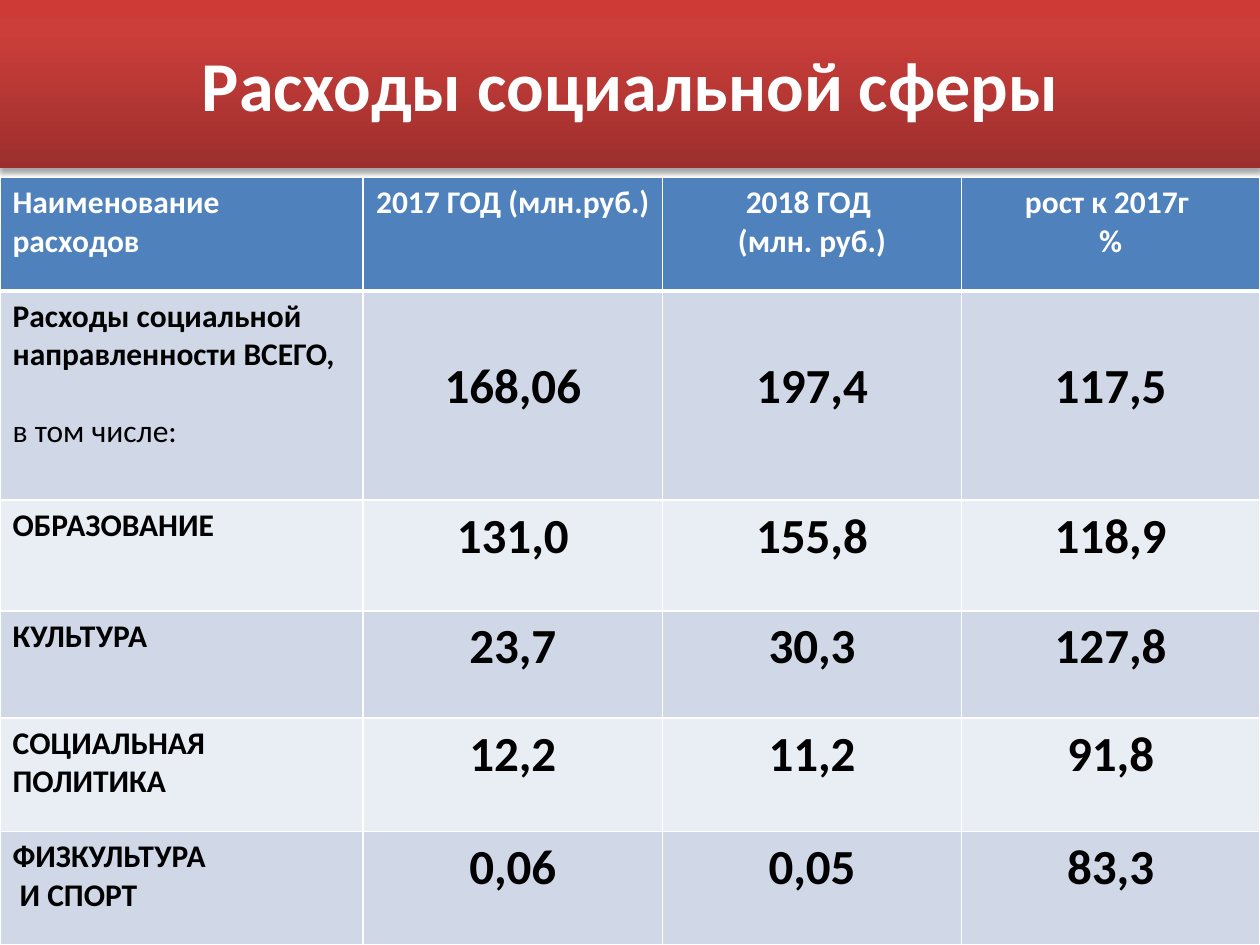
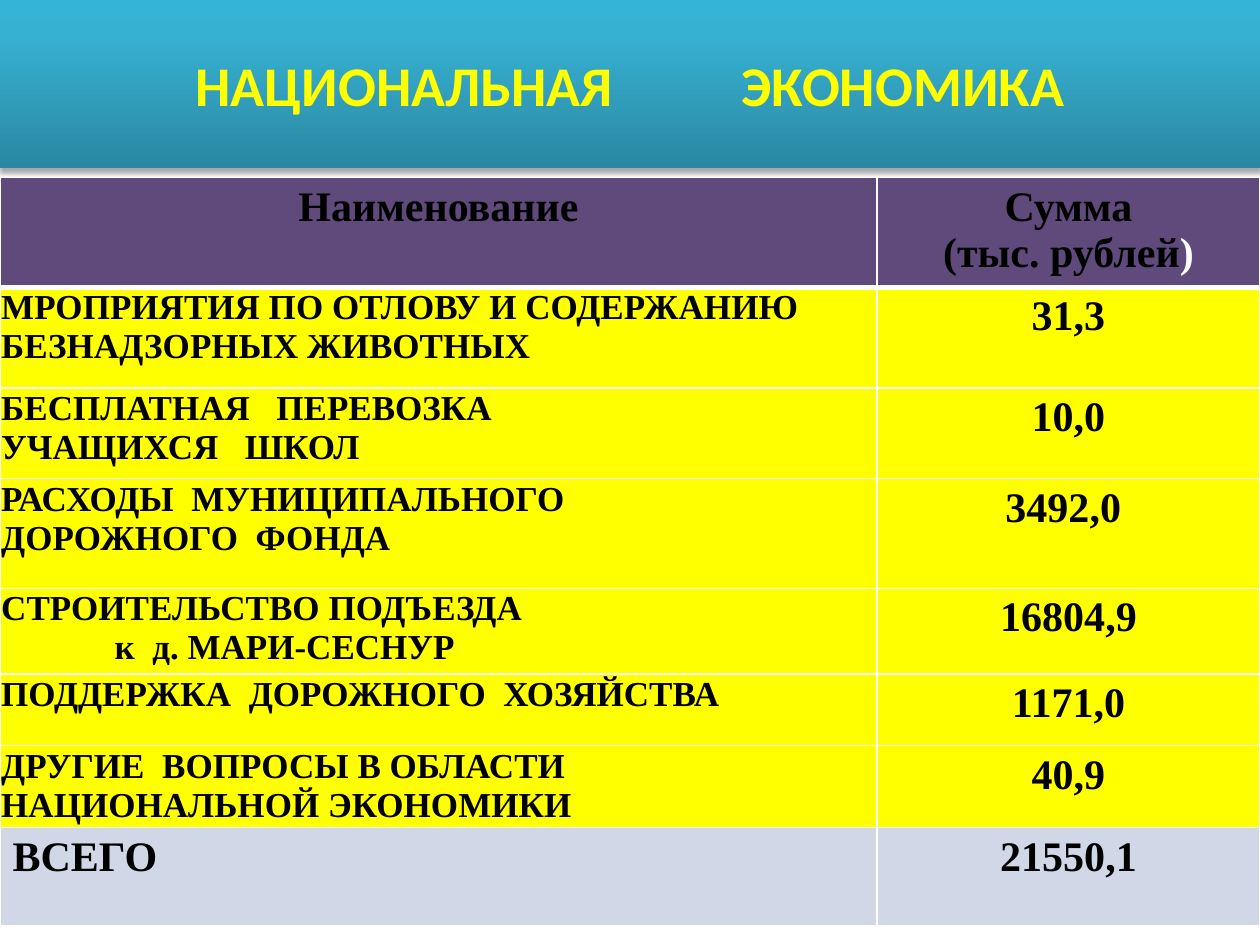
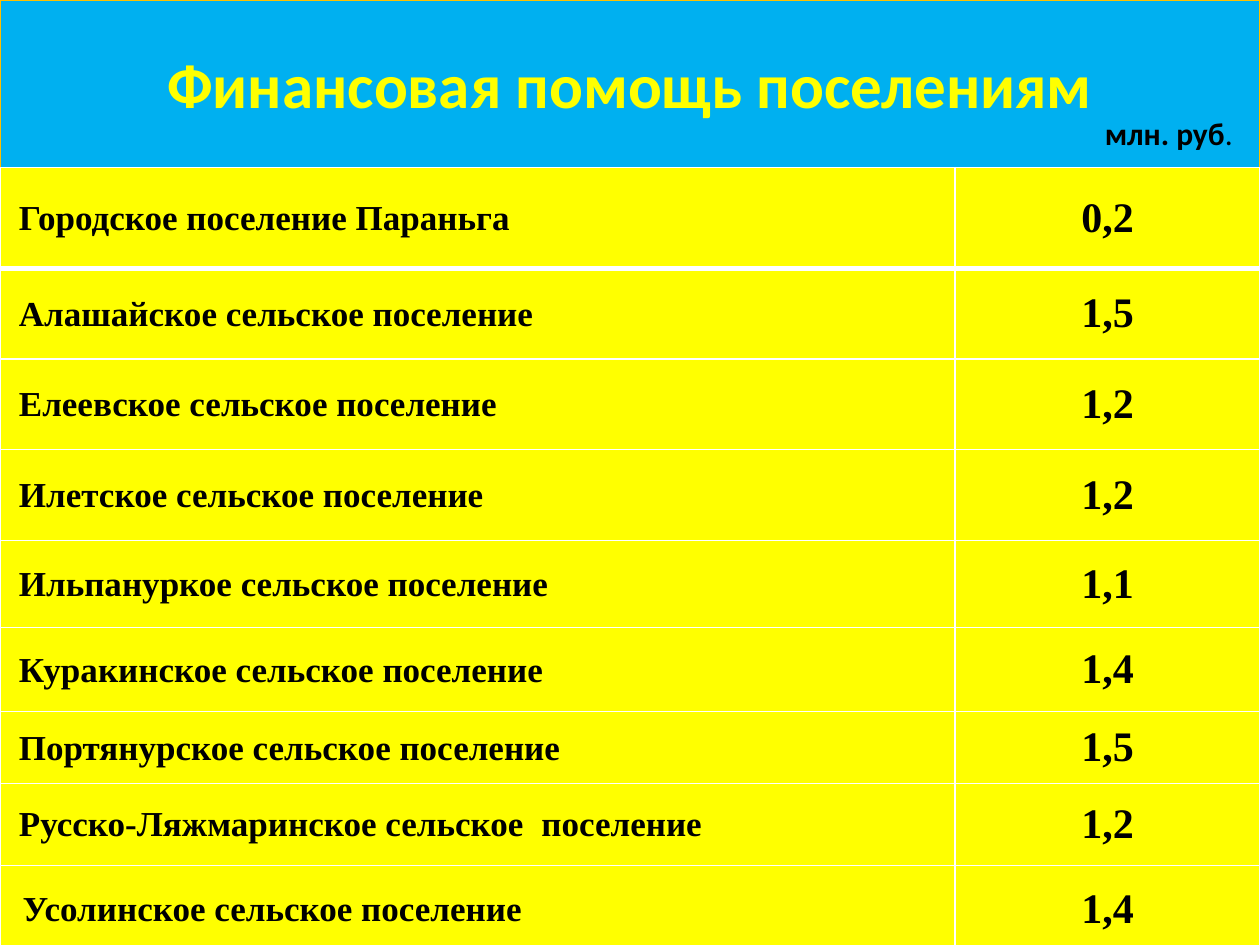
from lxml import etree
from pptx import Presentation
from pptx.dml.color import RGBColor
from pptx.enum.text import MSO_ANCHOR, MSO_AUTO_SIZE, PP_ALIGN
from pptx.oxml.ns import qn
from pptx.util import Pt

LEFT, CENTER = PP_ALIGN.LEFT, PP_ALIGN.CENTER
TOP, MIDDLE = MSO_ANCHOR.TOP, MSO_ANCHOR.MIDDLE
FIT_SHAPE = MSO_AUTO_SIZE.SHAPE_TO_FIT_TEXT

PX = 9144  # 100 px to the inch
W, H, BAND_H = 1000, 750, 133
SANS, SERIF = "Calibri", "Times New Roman"
GAP = "~"  # one wide space between words
CELL_INSETS = (10, 5, 10, 5)
TIGHT_INSETS = (1, 1, 1, 0)
C = {
    "white": "FFFFFF", "black": "000000", "yellow": "FFFF00",
    "header": "4F81BD", "band_dark": "D0D8E8", "band_light": "E9EDF4",
    "purple": "604A7B", "sky": "00B0F0", "orange": "FFC000",
}
RED = [(0, "9C2F2D"), (80, "CB3E3A"), (100, "CE3B37")]
TEAL = [(0, "2A88A2"), (80, "37B1D2"), (100, "34B4D6")]


def rgb(name):
    return RGBColor.from_string(C[name])


def sub(parent, tag, **attrs):
    el = etree.SubElement(parent, qn(tag))
    for key, value in attrs.items():
        el.set(key, str(value))
    return el


class Deck:
    def __init__(self):
        self.prs = Presentation()
        self.prs.slide_width, self.prs.slide_height = W * PX, H * PX
        self.s = None

    def new_slide(self):
        self.s = self.prs.slides.add_slide(self.prs.slide_layouts[5])

    def add_text(self, tf, lines, size, font=SANS, color="black", bold=True,
                 align=LEFT, gap=0):
        """Each line is a string or a list of (text, overrides) runs."""
        for i, line in enumerate(lines):
            p = tf.paragraphs[0] if i == 0 else tf.add_paragraph()
            p.alignment = align
            for text, over in [(line, {})] if isinstance(line, str) else line:
                for j, part in enumerate(text.split(GAP)):
                    pieces = [part] if j == 0 else [" ", part]
                    for piece in pieces:
                        r = p.add_run()
                        r.text = piece
                        r.font.size, r.font.name = Pt(size), font
                        r.font.bold = over.get("bold", bold)
                        r.font.color.rgb = rgb(over.get("color", color))
                        if piece == " ":
                            r._r.get_or_add_rPr().set("spc", str(gap * 100))

    def title(self, text, size, color, stops=None, fill=None, line=None, gap=0):
        sp = self.s.shapes.title
        sp.left, sp.top, sp.width, sp.height = 0, 0, W * PX, BAND_H * PX
        spPr = sp._element.spPr
        if stops:
            grad = sub(spPr, "a:gradFill", rotWithShape=1)
            gs_lst = sub(grad, "a:gsLst")
            for pos, value in stops:
                gs = sub(gs_lst, "a:gs", pos=pos * 1000)
                sub(gs, "a:srgbClr", val=value)
            sub(grad, "a:lin", ang=270 * 60000, scaled=0)
        else:
            sp.fill.solid()
            sp.fill.fore_color.rgb = rgb(fill)
            sp.line.color.rgb = rgb(line)
            sp.line.width = Pt(0.75)
        shadow = sub(sub(spPr, "a:effectLst"), "a:outerShdw", blurRad=Pt(3.1),
                     dist=Pt(1.8), dir=90 * 60000, rotWithShape=0)
        sub(sub(shadow, "a:srgbClr", val=C["black"]), "a:alpha", val=35000)
        sp.text_frame.vertical_anchor = MIDDLE
        self.add_text(sp.text_frame, [text], size, color=color, align=CENTER, gap=gap)

    def table(self, top, cols, rows):
        frame = self.s.shapes.add_table(len(rows), len(cols), 0, top * PX,
                                        W * PX, sum(rows) * PX)
        tbl = frame.table
        tbl.horz_banding = False
        for col, width in zip(tbl.columns, cols):
            col.width = width * PX
        for row, height in zip(tbl.rows, rows):
            row.height = height * PX
        return tbl

    def cell(self, tbl, row, col, lines, size, fill, anchor=TOP,
             insets=CELL_INSETS, **style):
        cell = tbl.cell(row, col)
        (cell.margin_left, cell.margin_top,
         cell.margin_right, cell.margin_bottom) = [v * PX for v in insets]
        cell.vertical_anchor = anchor
        tcPr = cell._tc.get_or_add_tcPr()
        for side in "LRTB":
            thick = (row == 0 and side == "B") or (row == 1 and side == "T")
            ln = sub(tcPr, f"a:ln{side}", w=Pt(3 if thick else 1))
            sub(sub(ln, "a:solidFill"), "a:srgbClr", val=C["white"])
        cell.fill.solid()
        cell.fill.fore_color.rgb = rgb(fill)
        self.add_text(cell.text_frame, lines, size, **style)

    def label(self, left, top, width, height, line, size):
        sp = self.s.shapes.add_textbox(left * PX, top * PX, width * PX, height * PX)
        sp.text_frame.word_wrap = True
        sp.text_frame.auto_size = FIT_SHAPE
        self.add_text(sp.text_frame, [line], size)


def social_spending(deck):
    deck.new_slide()
    deck.title("Расходы социальной сферы", 40, "white", stops=RED)
    tbl = deck.table(141, [288, 238, 237, 237], [90, 166, 88, 85, 90, 90])

    # Header row
    heads = [["Наименование расходов"], ["2017 ГОД (млн.руб.)"],
             ["2018 ГОД ", "(млн. руб.)"], ["рост к 2017г ", "%"]]
    for col, lines in enumerate(heads):
        deck.cell(tbl, 0, col, lines, 18, "header", color="white",
                  align=CENTER if col else LEFT)

    # Spending rows
    spending = [
        (["Расходы социальной направленности ВСЕГО,",
          [("в том числе:", {"bold": False})]], "168,06", "197,4", "117,5"),
        (["ОБРАЗОВАНИЕ"], "131,0", "155,8", "118,9"),
        (["КУЛЬТУРА"], "23,7", "30,3", "127,8"),
        (["СОЦИАЛЬНАЯ ПОЛИТИКА"], "12,2", "11,2", "91,8"),
        (["ФИЗКУЛЬТУРА", " И СПОРТ"], "0,06", "0,05", "83,3"),
    ]
    for row, (name, *values) in enumerate(spending, 1):
        fill = "band_dark" if row % 2 else "band_light"
        deck.cell(tbl, row, 0, name, 18, fill)
        insets = (10, 52, 10, 5) if row == 1 else CELL_INSETS
        for col, value in enumerate(values, 1):
            deck.cell(tbl, row, col, [value], 28, fill, insets=insets, align=CENTER)
    tbl.cell(1, 0).text_frame.paragraphs[1].space_before = Pt(22)


def national_economy(deck):
    deck.new_slide()
    deck.title("НАЦИОНАЛЬНАЯ~ЭКОНОМИКА", 32, "yellow", stops=TEAL, gap=66)
    tbl = deck.table(141, [696, 304], [87, 80, 72, 87, 68, 57, 65, 78])

    # Header row
    amount = ["Сумма", [("(тыс. рублей", {}), (")", {"color": "white"})]]
    for col, lines in enumerate([["Наименование"], amount]):
        deck.cell(tbl, 0, col, lines, 24, "purple", font=SERIF, align=CENTER)

    # Items: lines, value, extra width of the wide spaces in points
    items = [
        (["МРОПРИЯТИЯ ПО ОТЛОВУ И СОДЕРЖАНИЮ БЕЗНАДЗОРНЫХ ЖИВОТНЫХ"], "31,3", 0),
        (["БЕСПЛАТНАЯ~ПЕРЕВОЗКА", "УЧАЩИХСЯ~ШКОЛ"], "10,0", 10),
        (["РАСХОДЫ~МУНИЦИПАЛЬНОГО", "ДОРОЖНОГО~ФОНДА"], "3492,0 ", 5),
        (["СТРОИТЕЛЬСТВО ПОДЪЕЗДА", "к~д. МАРИ-СЕСНУР"], "16804,9", 5),
        (["ПОДДЕРЖКА~ДОРОЖНОГО~ХОЗЯЙСТВА"], "1171,0", 5),
        (["ДРУГИЕ~ВОПРОСЫ В ОБЛАСТИ НАЦИОНАЛЬНОЙ ЭКОНОМИКИ"], "40,9", 5),
    ]
    for row, (name, value, gap) in enumerate(items, 1):
        deck.cell(tbl, row, 0, name, 20, "yellow", insets=TIGHT_INSETS,
                  font=SERIF, gap=gap)
        deck.cell(tbl, row, 1, [value], 24, "yellow", font=SERIF, align=CENTER)
    village = tbl.cell(4, 0).text_frame.paragraphs[1]
    village._p.get_or_add_pPr().set("marL", str(90 * PX))

    # Total row
    for col, text in enumerate(["ВСЕГО", "21550,1"]):
        deck.cell(tbl, 7, col, [text], 24, "band_dark", font=SERIF,
                  align=CENTER if col else LEFT)


def settlement_aid(deck):
    deck.new_slide()
    deck.title("Финансовая помощь поселениям", 36, "yellow", fill="sky", line="orange")
    settlements = [
        ("Городское поселение Параньга", "0,2"),
        ("Алашайское сельское поселение", "1,5"),
        ("Елеевское сельское поселение", "1,2"),
        ("Илетское сельское поселение", "1,2"),
        ("Ильпануркое сельское поселение", "1,1"),
        ("Куракинское сельское поселение", "1,4"),
        ("Портянурское сельское поселение", "1,5"),
        ("Русско-Ляжмаринское сельское~поселение", "1,2"),
        ("Усолинское сельское поселение", "1,4"),
    ]
    tbl = deck.table(BAND_H, [758, 242], [80, 72, 72, 72, 69, 67, 57, 65, 70])
    last = len(settlements) - 1
    for row, (name, value) in enumerate(settlements):
        insets = (18, 5, 10, 5) if row == last else (15, 1, 1, 0)
        deck.cell(tbl, row, 0, [name], 20, "yellow", MIDDLE, insets,
                  font=SERIF, gap=5)
        deck.cell(tbl, row, 1, [value], 24, "yellow", MIDDLE,
                  font=SERIF, align=CENTER)
    deck.label(867, 86, 133, 40, [("млн. руб", {}), (".", {"bold": False})], 18)


def main():
    deck = Deck()
    social_spending(deck)
    national_economy(deck)
    settlement_aid(deck)
    deck.prs.save("out.pptx")


if __name__ == "__main__":
    main()
